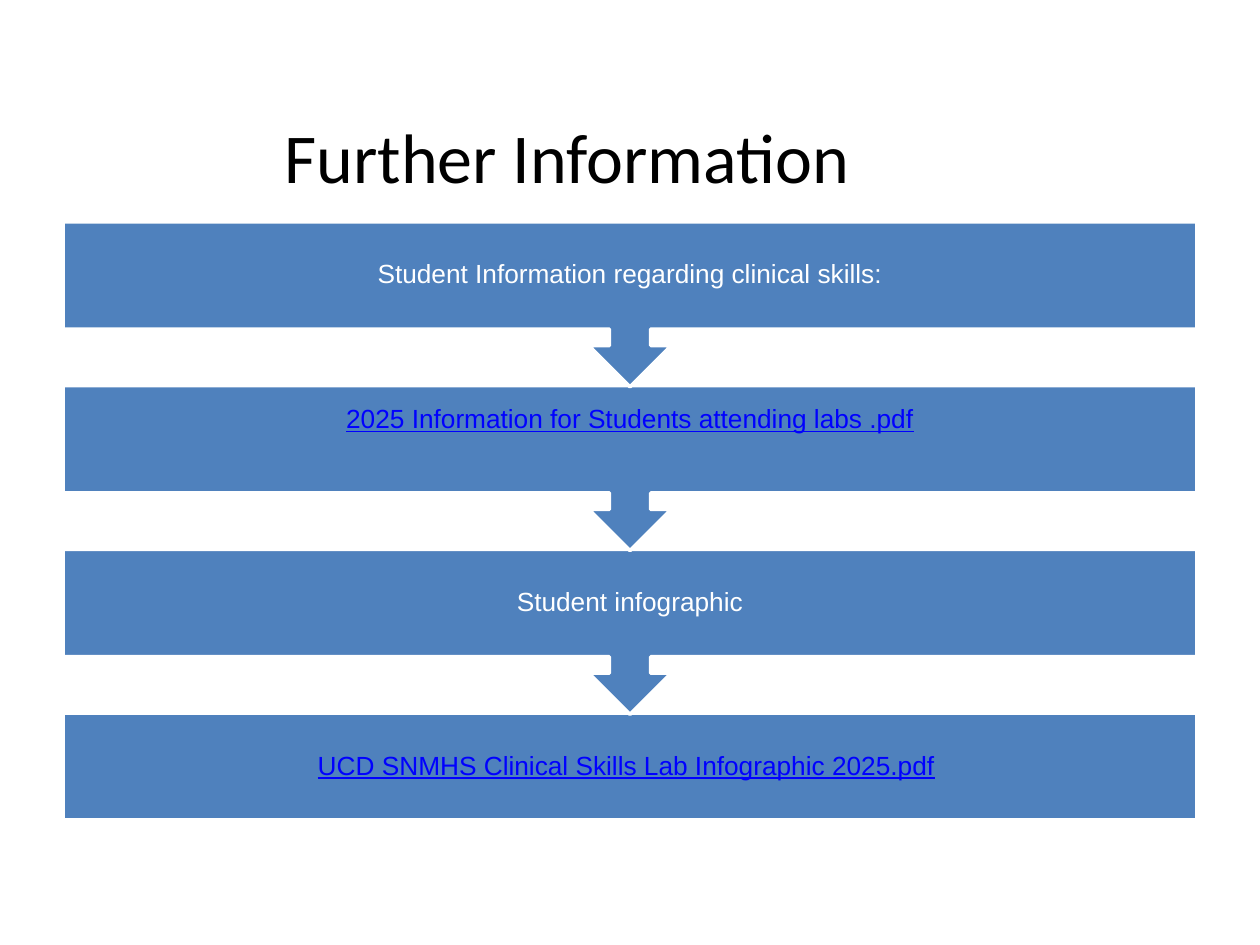
from dataclasses import dataclass

from pptx import Presentation
from pptx.dml.color import RGBColor
from pptx.enum.shapes import MSO_SHAPE
from pptx.enum.text import MSO_ANCHOR, PP_ALIGN
from pptx.shapes.shapetree import GroupShapes
from pptx.text.text import TextFrame
from pptx.util import Inches, Pt

CALLOUT = MSO_SHAPE.UP_ARROW_CALLOUT
RECTANGLE = MSO_SHAPE.RECTANGLE
CENTER = PP_ALIGN.CENTER
MIDDLE = MSO_ANCHOR.MIDDLE

BLUE, WHITE, BLACK, LINK = "4F81BD", "FFFFFF", "000000", "0000FF"
LEFT, WIDTH = 0.5, 9
FIRST_TOP, STEP = 1.76, 1.3
BAND_HEIGHT, CALLOUT_HEIGHT = 0.85, 1.31


@dataclass
class Step:
    text: str
    linked: bool = False
    text_shift: float = 0
    trailing: str = ""


STEPS = [
    Step("Student Information regarding clinical skills:"),
    Step("2025 Information for Students attending labs .pdf", linked=True, text_shift=-0.15),
    Step("Student infographic"),
    Step("UCD SNMHS Clinical Skills Lab Infographic 2025.pdf", linked=True, trailing=" "),
]


def color(value: str) -> RGBColor:
    return RGBColor.from_string(value)


def write(frame: TextFrame, text: str, *, size: float, font: str, fill: str,
          underline: bool = False, margin: float | None = None,
          spacing: float | None = None, trailing: str = "") -> None:
    frame.word_wrap = True
    frame.vertical_anchor = MIDDLE
    if margin is not None:
        frame.margin_left = frame.margin_right = Inches(margin)
        frame.margin_top = frame.margin_bottom = Inches(margin)
    para = frame.paragraphs[0]
    para.alignment = CENTER
    para.line_spacing = spacing
    for content, lined in ((text, underline), (trailing, False)):
        if content:
            span = para.add_run()
            span.text = content
            span.font.size = Pt(size)
            span.font.name = font
            span.font.color.rgb = color(fill)
            span.font.underline = lined


def draw_step(shapes: GroupShapes, step: Step, top: float, is_last: bool) -> None:
    kind, height = (RECTANGLE, BAND_HEIGHT) if is_last else (CALLOUT, CALLOUT_HEIGHT)
    band = shapes.add_shape(kind, Inches(LEFT), Inches(top), Inches(WIDTH), Inches(height))
    band.shadow.inherit = False
    band.fill.solid()
    band.fill.fore_color.rgb = color(BLUE)
    band.line.color.rgb = color(WHITE)
    band.line.width = Pt(2)
    if not is_last:
        band.rotation = 180
        for index, value in enumerate((0.25, 0.25, 0.25, 0.65)):
            band.adjustments[index] = value
    box = shapes.add_textbox(Inches(LEFT), Inches(top + step.text_shift),
                             Inches(WIDTH), Inches(BAND_HEIGHT))
    write(box.text_frame, step.text, size=15, font="Arial",
          fill=LINK if step.linked else WHITE, underline=step.linked,
          margin=0.12, spacing=0.9, trailing=step.trailing)


def main() -> None:
    deck = Presentation()
    deck.slide_width, deck.slide_height = Inches(10), Inches(7.5)
    page = deck.slides.add_slide(deck.slide_layouts[5])

    title = page.shapes.title
    title.left, title.top = Inches(0), Inches(0.61)
    title.width, title.height = Inches(9), Inches(1.25)
    write(title.text_frame, "Further Information", size=40, font="Calibri", fill=BLACK)

    flow = page.shapes.add_group_shape()
    last = len(STEPS) - 1
    for index in range(last, -1, -1):
        draw_step(flow.shapes, STEPS[index], FIRST_TOP + index * STEP, index == last)

    deck.save("out.pptx")


if __name__ == "__main__":
    main()
